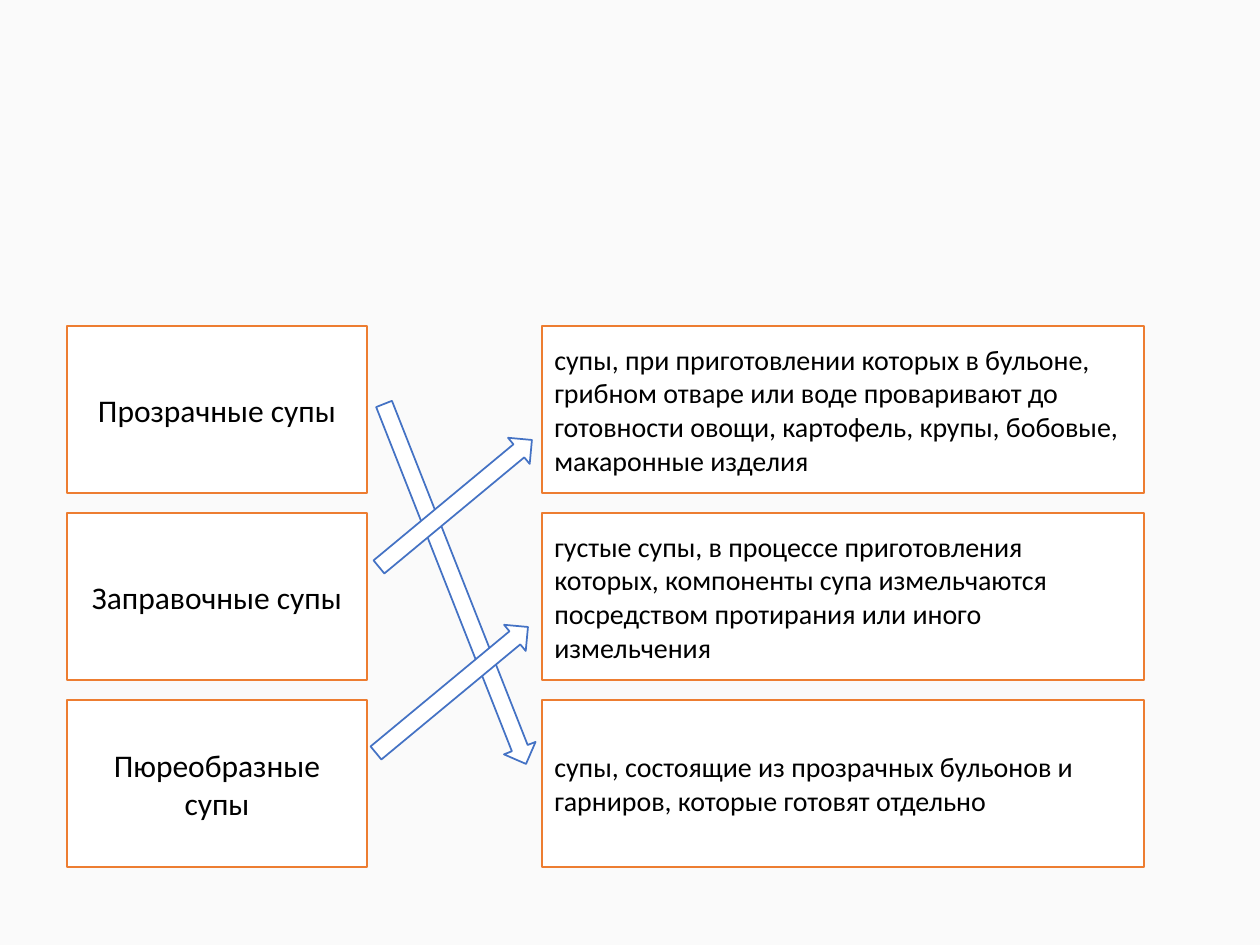
import math

from pptx import Presentation
from pptx import util as u
from pptx.dml.color import RGBColor
from pptx.enum import shapes, text

PX = 914400 / 126
ROW_TOP, ROW_STEP, ROW_H = 326, 187, 167
ARROW_H = 34

SOUPS = [
    ("Прозрачные супы",
     "супы, при приготовлении которых в бульоне, грибном отваре или воде "
     "проваривают до готовности овощи, картофель, крупы, бобовые, "
     "макаронные изделия"),
    ("Заправочные супы",
     "густые супы, в процессе приготовления которых, компоненты супа "
     "измельчаются посредством протирания или иного измельчения"),
    ("Пюреобразные супы",
     "супы, состоящие из прозрачных бульонов и гарниров, которые готовят "
     "отдельно"),
]
ARROWS = [
    ((384, 404), (526, 764)),
    ((379, 567), (532, 440)),
    ((376, 753), (528, 627)),
]


def px(n):
    return u.Emu(round(n * PX))


def color(value):
    return RGBColor.from_string(value)


def add_outlined(s, kind, x, y, w, h, line):
    """Add a white shape with a thin coloured outline."""
    sp = s.shapes.add_shape(kind, px(x), px(y), px(w), px(h))
    sp.shadow.inherit = False
    sp.fill.solid()
    sp.fill.fore_color.rgb = color("FFFFFF")
    sp.line.color.rgb = color(line)
    sp.line.width = u.Pt(1)
    return sp


def add_box(s, x, y, w, words, size, align):
    sp = add_outlined(s, shapes.MSO_SHAPE.RECTANGLE, x, y, w, ROW_H, "ED7D31")
    tf = sp.text_frame
    tf.word_wrap = True
    tf.vertical_anchor = text.MSO_ANCHOR.MIDDLE
    p = tf.paragraphs[0]
    p.alignment = align
    r = p.add_run()
    r.text = words
    r.font.name = "Calibri"
    r.font.size = u.Pt(size)
    r.font.color.rgb = color("000000")


def add_arrow(s, start, end):
    """Add a block arrow turned to run from start to end."""
    (x1, y1), (x2, y2) = start, end
    length = math.dist(start, end)
    sp = add_outlined(s, shapes.MSO_SHAPE.RIGHT_ARROW,
                      (x1 + x2 - length) / 2, (y1 + y2 - ARROW_H) / 2,
                      length, ARROW_H, "4472C4")
    sp.rotation = math.degrees(math.atan2(y2 - y1, x2 - x1)) % 360


def main():
    prs = Presentation()
    prs.slide_width, prs.slide_height = px(1260), px(945)
    s = prs.slides.add_slide(prs.slide_layouts[6])
    s.background.fill.solid()
    s.background.fill.fore_color.rgb = color("FAFAFA")
    for row, (name, meaning) in enumerate(SOUPS):
        y = ROW_TOP + row * ROW_STEP
        add_box(s, 67, y, 300, name, 18, text.PP_ALIGN.CENTER)
        add_box(s, 542, y, 602, meaning, 16, text.PP_ALIGN.LEFT)
    for start, end in ARROWS:
        add_arrow(s, start, end)
    prs.save("out.pptx")


if __name__ == "__main__":
    main()
